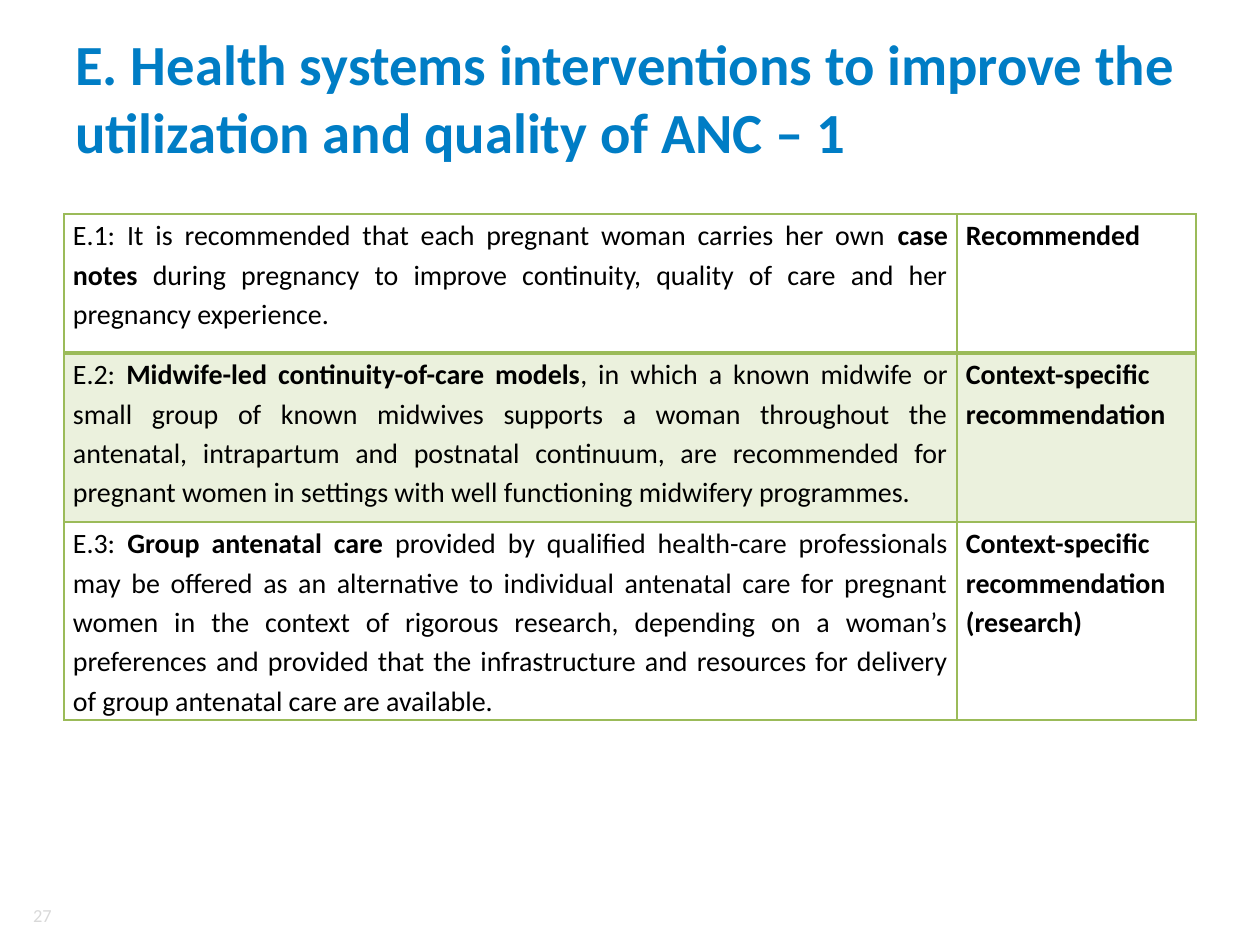
from lxml.etree import SubElement
from pptx import Presentation
from pptx.dml.color import RGBColor
from pptx.enum.text import MSO_ANCHOR, PP_ALIGN
from pptx.oxml.ns import qn
from pptx.util import Emu, Pt

PX = 914400 // 126
BLUE = RGBColor(0x00, 0x7D, 0xC5)
GREEN = RGBColor(0x9B, 0xBB, 0x59)
GREY = RGBColor(0xD9, 0xD9, 0xD9)
BLACK = RGBColor(0x00, 0x00, 0x00)


def px(length):
    return Emu(length * PX)


class SlideBuilder:
    font_name = "Calibri"

    def __init__(self, slide):
        self.slide = slide

    def add_run(self, paragraph, text, size, color, bold=False):
        run = paragraph.add_run()
        run.text = text
        run.font.name = self.font_name
        run.font.size = Pt(size)
        run.font.bold = bold
        run.font.color.rgb = color

    def add_text(self, box, text, size, color, bold=False, align=PP_ALIGN.LEFT):
        shape = self.slide.shapes.add_textbox(*map(px, box))
        frame = shape.text_frame
        frame.word_wrap = True
        frame.vertical_anchor = MSO_ANCHOR.MIDDLE
        paragraph = frame.paragraphs[0]
        paragraph.alignment = align
        self.add_run(paragraph, text, size, color, bold)

    def add_border(self, cell, side, width):
        line = SubElement(cell._tc.get_or_add_tcPr(), qn(f"a:{side}"), w=str(Pt(width)))
        fill = SubElement(line, qn("a:solidFill"))
        SubElement(fill, qn("a:srgbClr"), val=str(GREEN))

    def fill_cell(self, cell, runs, align, tinted, top_width, bottom_width):
        cell.margin_left = cell.margin_right = px(9)
        cell.margin_top = cell.margin_bottom = 0
        widths = {"lnL": 1, "lnR": 1, "lnT": top_width, "lnB": bottom_width}
        for side, width in widths.items():
            self.add_border(cell, side, width)
        if tinted:
            cell.fill.solid()
            cell.fill.fore_color.rgb = GREEN
            color = cell._tc.tcPr.find(qn("a:solidFill")).find(qn("a:srgbClr"))
            SubElement(color, qn("a:alpha"), val="20000")
        else:
            cell.fill.background()
        paragraph = cell.text_frame.paragraphs[0]
        paragraph.alignment = align
        paragraph.line_spacing = 1.15
        for text, bold in runs:
            self.add_run(paragraph, text, 16, BLACK, bold)

    def add_table(self, left, top, column_widths, row_heights, rows):
        table = self.slide.shapes.add_table(
            len(row_heights), len(column_widths), px(left), px(top),
            px(sum(column_widths)), px(sum(row_heights))).table
        table.first_row = table.horz_banding = False
        for column, width in zip(table.columns, column_widths):
            column.width = px(width)
        for index, (height, (runs, status, status_align)) in enumerate(zip(row_heights, rows)):
            table.rows[index].height = px(height)
            # The first row is set off by a heavier rule; the second is tinted
            style = (index == 1, 2 if index == 1 else 1, 2 if index == 0 else 1)
            self.fill_cell(table.cell(index, 0), runs, PP_ALIGN.JUSTIFY, *style)
            self.fill_cell(table.cell(index, 1), [(status, True)], status_align, *style)


RECOMMENDATIONS = [
    ([("E.1: It is recommended that each pregnant woman carries her own ", False),
      ("case notes", True),
      (" during pregnancy to improve continuity, quality of care and her "
       "pregnancy experience.", False)],
     "Recommended", PP_ALIGN.JUSTIFY),
    ([("E.2: ", False),
      ("Midwife-led continuity-of-care models", True),
      (", in which a known midwife or small group of known midwives supports a woman "
       "throughout the antenatal, intrapartum and postnatal continuum, are recommended "
       "for pregnant women in settings with well functioning midwifery programmes.", False)],
     "Context-specific recommendation", PP_ALIGN.JUSTIFY),
    ([("E.3: ", False),
      ("Group antenatal care", True),
      (" provided by qualified health-care professionals may be offered as an alternative "
       "to individual antenatal care for pregnant women in the context of rigorous research, "
       "depending on a woman’s preferences and provided that the infrastructure and "
       "resources for delivery of group antenatal care are available.", False)],
     "Context-specific recommendation (research)", PP_ALIGN.LEFT),
]


def main():
    presentation = Presentation()
    presentation.slide_width = px(1260)
    presentation.slide_height = px(945)
    builder = SlideBuilder(presentation.slides.add_slide(presentation.slide_layouts[6]))

    # Page number
    builder.add_text((15, 900, 49, 30), "27", 10.5, GREY, align=PP_ALIGN.RIGHT)

    # Title
    builder.add_text(
        (63, 38, 1134, 117),
        "E. Health systems interventions to improve the utilization and quality of ANC – 1",
        32.4, BLUE, bold=True)

    # Recommendations table
    builder.add_table(64, 214, [893, 239], [139, 169, 198], RECOMMENDATIONS)

    presentation.save("out.pptx")


if __name__ == "__main__":
    main()
